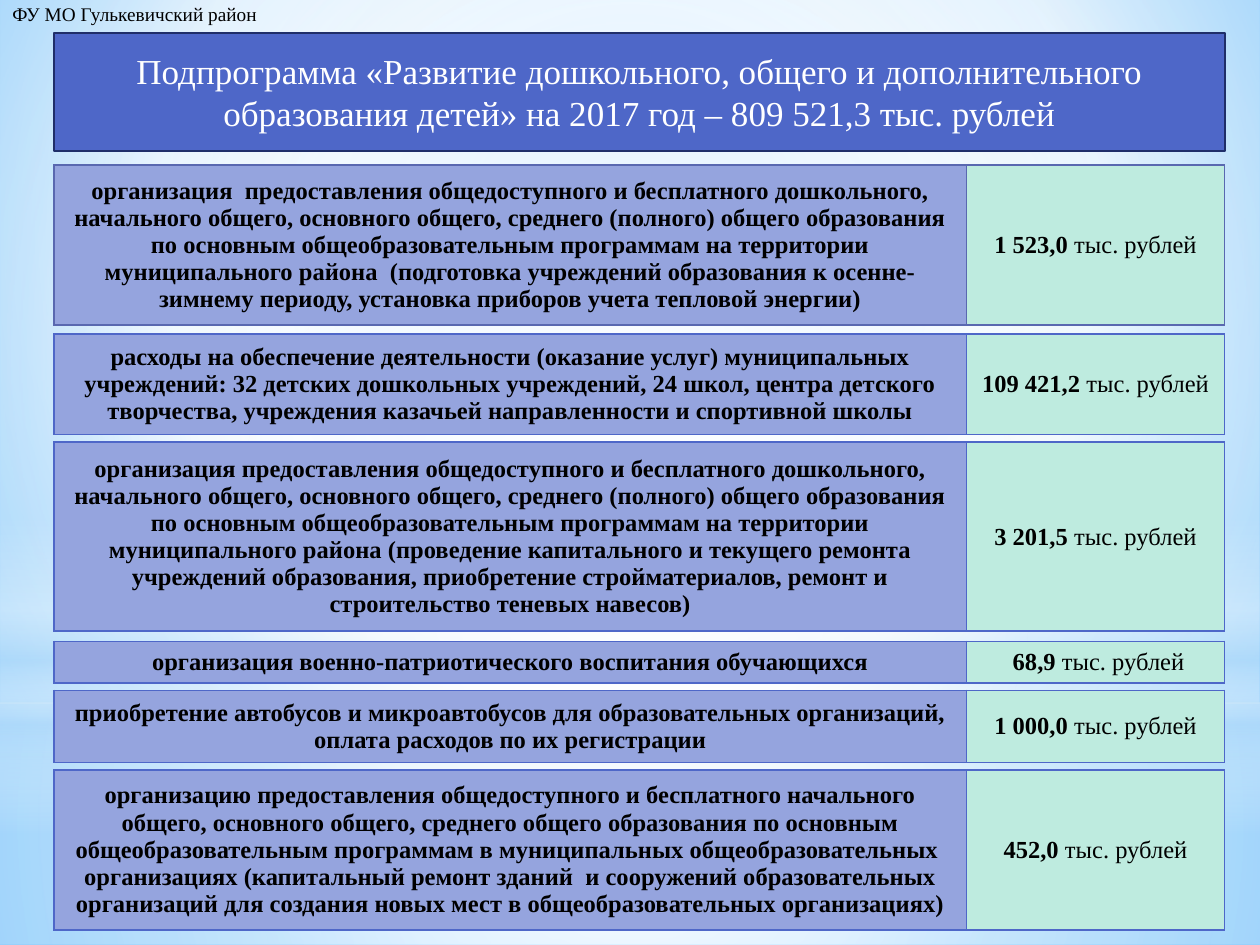
from dataclasses import dataclass

from lxml import etree
from pptx import Presentation
from pptx.dml.color import RGBColor
from pptx.enum import shapes, text
from pptx.oxml import parse_xml
from pptx.oxml.ns import qn
from pptx.util import Inches, Pt

FONT = "Times New Roman"
COLORS = {
    "text": "000000", "white": "FFFFFF", "banner": "4E67C8", "banner_line": "1F2E69",
    "purpose": "95A4DE", "amount": "BEEBDF", "border": "4E67C8", "first_border": "5968B0",
    "sky": "B4DCFA", "sky_middle": "9ED5FF", "sky_edge": "5BB9FF",
}
LEFT, WIDTH = 0.43, 9.29
COLUMN_WIDTHS = (7.24, 2.05)
UNIT = "тыс. рублей"
DRAWING_NS = "http://schemas.openxmlformats.org/drawingml/2006/main"


@dataclass
class Gradient:
    """Stops are (position %, colour name, opacity %); center is left, top, right, bottom in %.

    Without a center the gradient runs from top to bottom.
    """
    stops: tuple
    center: tuple | None = (50, 50, 50, 50)


@dataclass
class Glow:
    kind: shapes.MSO_SHAPE
    top: float
    height: float
    gradient: Gradient


@dataclass
class Expense:
    top: float
    height: float
    purpose: str
    amount: str
    border: str = "border"


SKY = Gradient(((0, "sky_middle", 100), (60, "white", 100), (100, "sky_edge", 100)),
               (20, 10, 20, 60))
GLOWS = [
    Glow(shapes.MSO_SHAPE.RECTANGLE, 5.58, 1.92,
         Gradient(((0, "white", 91), (37, "white", 76), (100, "sky", 79)))),
    Glow(shapes.MSO_SHAPE.RECTANGLE, 0, 5.58,
         Gradient(((0, "white", 89), (48, "white", 62), (100, "sky", 79)))),
    Glow(shapes.MSO_SHAPE.RECTANGLE, 4.12, 2.5,
         Gradient(((0, "white", 0), (29, "white", 30), (45, "sky", 40),
                   (55, "white", 26), (65, "sky", 60), (100, "white", 0)), None)),
    Glow(shapes.MSO_SHAPE.OVAL, 1.75, 5.58,
         Gradient(((0, "white", 100), (56, "white", 0)))),
]
EXPENSES = [
    Expense(1.31, 1.27,
            "организация  предоставления общедоступного и бесплатного дошкольного, начального "
            "общего, основного общего, среднего (полного) общего образования по основным "
            "общеобразовательным программам на территории муниципального района  (подготовка "
            "учреждений образования к осенне-зимнему периоду, установка приборов учета "
            "тепловой энергии)", "1 523,0 ", "first_border"),
    Expense(2.65, 0.8,
            "расходы на обеспечение деятельности (оказание услуг) муниципальных учреждений: "
            "32 детских дошкольных учреждений, 24 школ, центра детского творчества, "
            "учреждения казачьей направленности и спортивной школы", "109 421,2 "),
    Expense(3.51, 1.5,
            "организация предоставления общедоступного и бесплатного дошкольного, начального "
            "общего, основного общего, среднего (полного) общего образования по основным "
            "общеобразовательным программам на территории муниципального района (проведение "
            "капитального и текущего ремонта учреждений образования, приобретение "
            "стройматериалов, ремонт и строительство теневых навесов)", "3 201,5 "),
    Expense(5.09, 0.33, "организация военно-патриотического воспитания обучающихся", " 68,9 "),
    Expense(5.48, 0.57,
            "приобретение автобусов и микроавтобусов для образовательных организаций, "
            "оплата расходов по их регистрации", "1 000,0 "),
    Expense(6.11, 1.27,
            "организацию предоставления общедоступного и бесплатного начального общего, "
            "основного общего, среднего общего образования по основным общеобразовательным "
            "программам в муниципальных общеобразовательных  организациях (капитальный ремонт "
            "зданий  и сооружений образовательных организаций для создания новых мест в "
            "общеобразовательных организациях)", "452,0 "),
]


def color(name: str) -> RGBColor:
    return RGBColor.from_string(COLORS[name])


def set_solid(fill, name: str) -> None:
    fill.solid()
    fill.fore_color.rgb = color(name)


def set_gradient(owner, gradient: Gradient) -> None:
    """Swap the first solid fill found in the owner's XML for a gradient."""
    stops = "".join(
        f'<a:gs pos="{position * 1000}"><a:srgbClr val="{COLORS[name]}">'
        f'<a:alpha val="{opacity * 1000}"/></a:srgbClr></a:gs>'
        for position, name, opacity in gradient.stops)
    if gradient.center:
        sides = " ".join(f'{side}="{value * 1000}"'
                         for side, value in zip("ltrb", gradient.center))
        direction = f'<a:path path="circle"><a:fillToRect {sides}/></a:path>'
    else:
        direction = '<a:lin ang="5400000" scaled="0"/>'
    solid = owner.element.find(".//" + qn("a:solidFill"))
    solid.getparent().replace(solid, parse_xml(
        f'<a:gradFill xmlns:a="{DRAWING_NS}" rotWithShape="1">'
        f'<a:gsLst>{stops}</a:gsLst>{direction}</a:gradFill>'))


def style_paragraph(paragraph, size: float, name: str, alignment=text.PP_ALIGN.CENTER) -> None:
    paragraph.alignment = alignment
    paragraph.font.name = FONT
    paragraph.font.size = Pt(size)
    paragraph.font.color.rgb = color(name)


def draw_backdrop(slide) -> None:
    set_solid(slide.background.fill, "white")
    set_gradient(slide, SKY)
    for glow in GLOWS:
        shape = slide.shapes.add_shape(glow.kind, 0, Inches(glow.top),
                                       Inches(10), Inches(glow.height))
        shape.shadow.inherit = False
        shape.line.fill.background()
        set_solid(shape.fill, "white")
        set_gradient(shape, glow.gradient)


def draw_label(slide) -> None:
    label = slide.shapes.add_textbox(0, Inches(-0.03), Inches(2.18), Inches(0.29))
    label.text_frame.word_wrap = False
    paragraph = label.text_frame.paragraphs[0]
    paragraph.text = "ФУ МО Гулькевичский район"
    style_paragraph(paragraph, 11, "text", text.PP_ALIGN.LEFT)


def draw_title(slide) -> None:
    title = slide.shapes.title
    slide.shapes.element.append(title.element)  # bring in front of the backdrop
    title.left, title.top = Inches(LEFT), Inches(0.26)
    title.width, title.height = Inches(WIDTH), Inches(0.94)
    title.element.spPr.find(qn("a:xfrm")).addnext(parse_xml(
        f'<a:prstGeom xmlns:a="{DRAWING_NS}" prst="roundRect"><a:avLst/></a:prstGeom>'))
    set_solid(title.fill, "banner")
    title.line.color.rgb = color("banner_line")
    title.line.width = Pt(1.25)
    frame = title.text_frame
    frame.word_wrap = True
    frame.auto_size = text.MSO_AUTO_SIZE.NONE
    frame.vertical_anchor = text.MSO_ANCHOR.MIDDLE
    paragraph = frame.paragraphs[0]
    paragraph.text = ("Подпрограмма «Развитие дошкольного, общего и дополнительного "
                      "образования детей» на 2017 год – 809 521,3 тыс. рублей")
    style_paragraph(paragraph, 20, "white")


def fill_cell(cell, fill: str, border: str, runs: list[tuple[str, bool]]) -> None:
    """Write (words, bold) runs and give the cell its fill and 1 pt borders."""
    cell.vertical_anchor = text.MSO_ANCHOR.MIDDLE
    paragraph = cell.text_frame.paragraphs[0]
    for words, bold in runs:
        run = paragraph.add_run()
        run.text = words
        run.font.bold = bold
    style_paragraph(paragraph, 14, "text")
    properties = cell._tc.get_or_add_tcPr()
    for side in ("lnL", "lnR", "lnT", "lnB"):
        line = etree.SubElement(properties, qn(f"a:{side}"), w=str(Pt(1)))
        solid = etree.SubElement(line, qn("a:solidFill"))
        etree.SubElement(solid, qn("a:srgbClr"), val=COLORS[border])
    set_solid(cell.fill, fill)


def draw_expense(slide, expense: Expense) -> None:
    table = slide.shapes.add_table(1, 2, Inches(LEFT), Inches(expense.top),
                                   Inches(WIDTH), Inches(expense.height)).table
    table.first_row = table.horz_banding = False
    for column, width in zip(table.columns, COLUMN_WIDTHS):
        column.width = Inches(width)
    fill_cell(table.cell(0, 0), "purpose", expense.border, [(expense.purpose, True)])
    fill_cell(table.cell(0, 1), "amount", expense.border,
              [(expense.amount, True), (UNIT, False)])


def main() -> None:
    presentation = Presentation()
    presentation.slide_width, presentation.slide_height = Inches(10), Inches(7.5)
    slide = presentation.slides.add_slide(presentation.slide_layouts[5])
    draw_backdrop(slide)
    draw_label(slide)
    draw_title(slide)
    for expense in EXPENSES:
        draw_expense(slide, expense)
    presentation.save("out.pptx")


if __name__ == "__main__":
    main()
